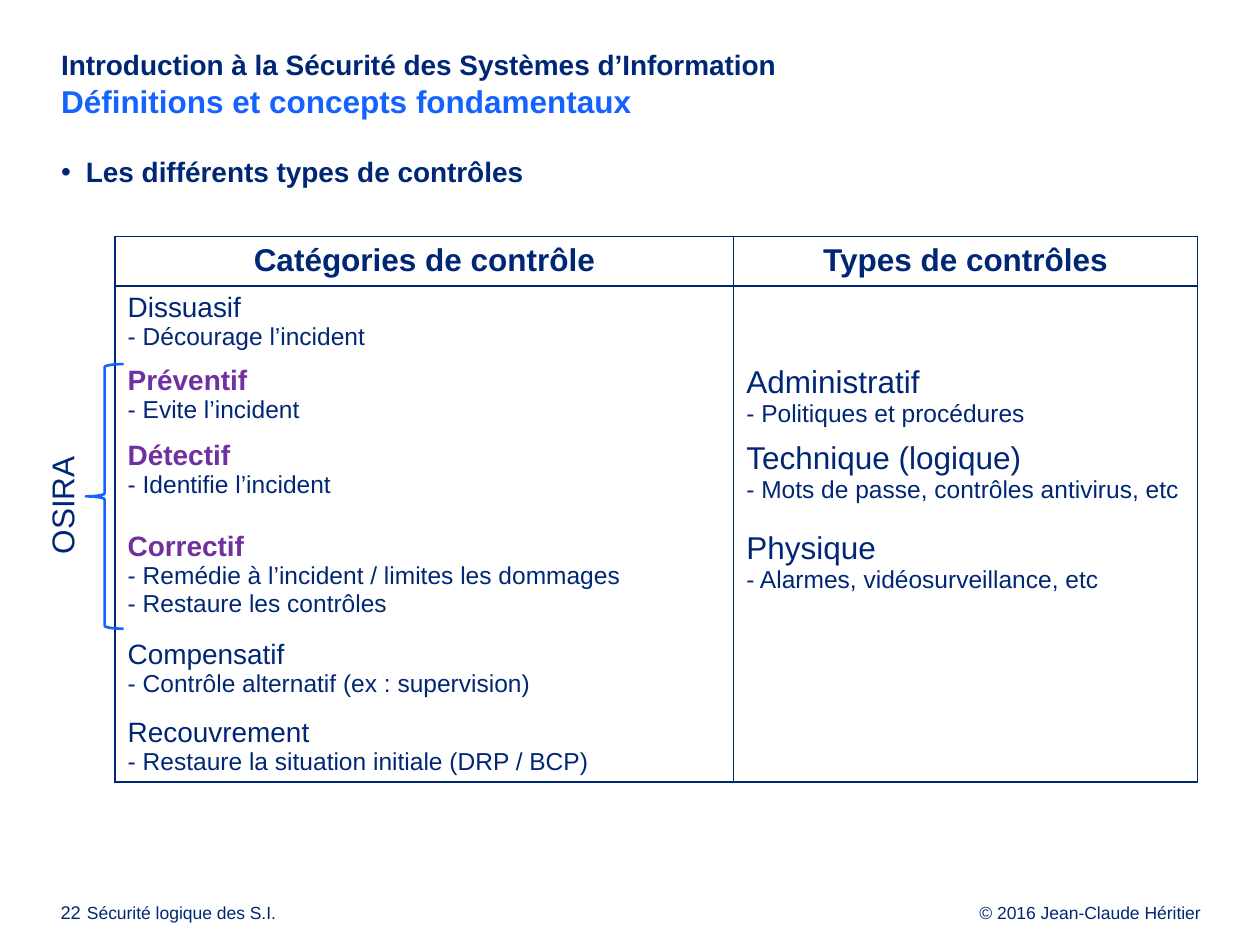
from lxml import etree
from pptx import Presentation
from pptx.dml.color import RGBColor
from pptx.enum.shapes import MSO_SHAPE as Preset
from pptx.enum.text import MSO_ANCHOR as Anchor, PP_ALIGN as Align
from pptx.oxml.ns import qn
from pptx.util import Pt

NAVY, BLUE, PURPLE = "002776", "1462FF", "7030A0"

CATEGORIES = [
    ("Dissuasif", "- Décourage l’incident", False),
    ("Préventif", "- Evite l’incident", True),
    ("Détectif", "- Identifie l’incident", True),
    ("Correctif", "- Remédie à l’incident / limites les dommages\n"
                  "- Restaure les contrôles", True),
    ("Compensatif", "- Contrôle alternatif (ex : supervision)", False),
    ("Recouvrement", "- Restaure la situation initiale (DRP / BCP)", False),
]
TYPES = [
    None,
    ("Administratif", "- Politiques et procédures"),
    ("Technique (logique)", "- Mots de passe, contrôles antivirus, etc"),
    ("Physique", "- Alarmes, vidéosurveillance, etc"),
    None,
    None,
]
COLUMN_WIDTHS = [353.5, 265]
ROW_HEIGHTS = [28.1, 41.8, 41.8, 51.8, 61.9, 44.6, 31.7]


def colour(hex_code):
    return RGBColor.from_string(hex_code)


def add_run(paragraph, text, size, hex_code=NAVY, bold=False):
    """Add text to a paragraph; a newline becomes a line break."""
    for number, line in enumerate(text.split("\n")):
        if number:
            paragraph.add_line_break()
        if line:
            run = paragraph.add_run()
            run.text = line
            for key, value in dict(name="Arial", size=Pt(size), bold=bold).items():
                setattr(run.font, key, value)
            run.font.color.rgb = colour(hex_code)


def fill_text(frame, paragraphs, **paragraph_format):
    """Write paragraphs, each a list of run tuples, into a text frame."""
    for number, runs in enumerate(paragraphs):
        paragraph = frame.add_paragraph() if number else frame.paragraphs[0]
        for key, value in paragraph_format.items():
            setattr(paragraph, key, value)
        for run in runs:
            add_run(paragraph, *run)


def add_text(slide, box, paragraphs, left_inset=0, **paragraph_format):
    text_box = slide.shapes.add_textbox(*map(Pt, box))
    frame = text_box.text_frame
    frame_format = dict(word_wrap=True, vertical_anchor=Anchor.TOP,
                        margin_left=Pt(left_inset), margin_top=0,
                        margin_right=0, margin_bottom=0)
    for key, value in frame_format.items():
        setattr(frame, key, value)
    fill_text(frame, paragraphs, **paragraph_format)
    return text_box


def add_bullet(paragraph, indent):
    properties = paragraph._p.get_or_add_pPr()
    properties.set("marL", str(Pt(indent)))
    properties.set("indent", str(-Pt(indent)))
    etree.SubElement(properties, qn("a:buFont")).set("typeface", "Arial")
    etree.SubElement(properties, qn("a:buChar")).set("char", "•")


def set_borders(cell, drawn):
    """Draw the named cell sides and blank the others."""
    properties = cell._tc.get_or_add_tcPr()
    for position, side in enumerate("LRTB"):
        line = etree.Element(qn("a:ln" + side), w=str(Pt(1)))
        if side in drawn:
            fill = etree.SubElement(line, qn("a:solidFill"))
            etree.SubElement(fill, qn("a:srgbClr")).set("val", NAVY)
        else:
            etree.SubElement(line, qn("a:noFill"))
        properties.insert(position, line)


def add_controls_table(slide):
    rows, columns = len(ROW_HEIGHTS), len(COLUMN_WIDTHS)
    table = slide.shapes.add_table(
        rows, columns, Pt(65.8), Pt(135.2),
        Pt(sum(COLUMN_WIDTHS)), Pt(sum(ROW_HEIGHTS))).table
    table.first_row = table.horz_banding = False
    for column, width in zip(table.columns, COLUMN_WIDTHS):
        column.width = Pt(width)
    for row, height in zip(table.rows, ROW_HEIGHTS):
        row.height = Pt(height)

    # Cell frames: full header, then open rows inside one outline
    for index in range(rows):
        sides = {0: "LRTB", 1: "LRT", rows - 1: "LRB"}.get(index, "LR")
        for cell in table.rows[index].cells:
            cell.fill.background()
            cell.margin_bottom = Pt(1)
            set_borders(cell, sides)

    # Header
    for column, heading in enumerate(["Catégories de contrôle", "Types de contrôles"]):
        fill_text(table.cell(0, column).text_frame,
                  [[(heading, 18, NAVY, True)]], alignment=Align.CENTER)

    # Content
    for row, (category, control_type) in enumerate(zip(CATEGORIES, TYPES), 1):
        name, detail, bracketed = category
        fill_text(table.cell(row, 0).text_frame, [
            [(name + "\n", 16, PURPLE if bracketed else NAVY, bracketed),
             (detail, 14)]])
        if control_type:
            name, detail = control_type
            fill_text(table.cell(row, 1).text_frame, [[(name, 18)], [(detail, 14)]])


def add_brace(slide, box):
    brace = slide.shapes.add_shape(Preset.LEFT_BRACE, *map(Pt, box))
    brace.shadow.inherit = False
    brace.fill.background()
    brace.line.color.rgb = colour(BLUE)
    brace.line.width = Pt(1.5)
    brace.adjustments[0] = 0.08
    brace.adjustments[1] = 0.5


def main():
    deck = Presentation()
    deck.slide_width, deck.slide_height = Pt(720), Pt(540)
    slide = deck.slides.add_slide(deck.slide_layouts[6])

    # Footer
    footer_top, footer_height, spacing = 516.7, 11.5, Pt(10.8)
    add_text(slide, (504, footer_top, 182, footer_height),
             [[("© 2016 Jean-Claude Héritier", 10)]],
             alignment=Align.RIGHT, line_spacing=spacing)
    add_text(slide, (49.7, footer_top, 182, footer_height),
             [[("Sécurité logique des S.I.", 10)]], line_spacing=spacing)
    add_text(slide, (34.6, footer_top, 18.7, footer_height),
             [[("22", 10.5)]], line_spacing=spacing)

    # Title and topic
    add_text(slide, (32, 27.4, 663, 49.7), [[
        ("Introduction à la Sécurité des Systèmes d’Information\n", 16, NAVY, True),
        ("Définitions et concepts fondamentaux", 18, BLUE, True)]], left_inset=2.9)
    topic = add_text(slide, (32, 88.6, 663, 30),
                     [[("Les différents types de contrôles", 16, NAVY, True)]],
                     left_inset=2.9, space_after=Pt(2.7))
    add_bullet(topic.text_frame.paragraphs[0], 14.2)

    add_controls_table(slide)

    # Bracket around the highlighted categories
    add_brace(slide, (49, 208.1, 21.6, 151.2))
    bracket_label = add_text(slide, (0.7, 274.3, 69.1, 28.8), [[("OSIRA", 18)]],
                             alignment=Align.CENTER)
    bracket_label.text_frame.vertical_anchor = Anchor.MIDDLE
    bracket_label.text_frame.word_wrap = False
    bracket_label.rotation = 270

    deck.save("out.pptx")


if __name__ == "__main__":
    main()
